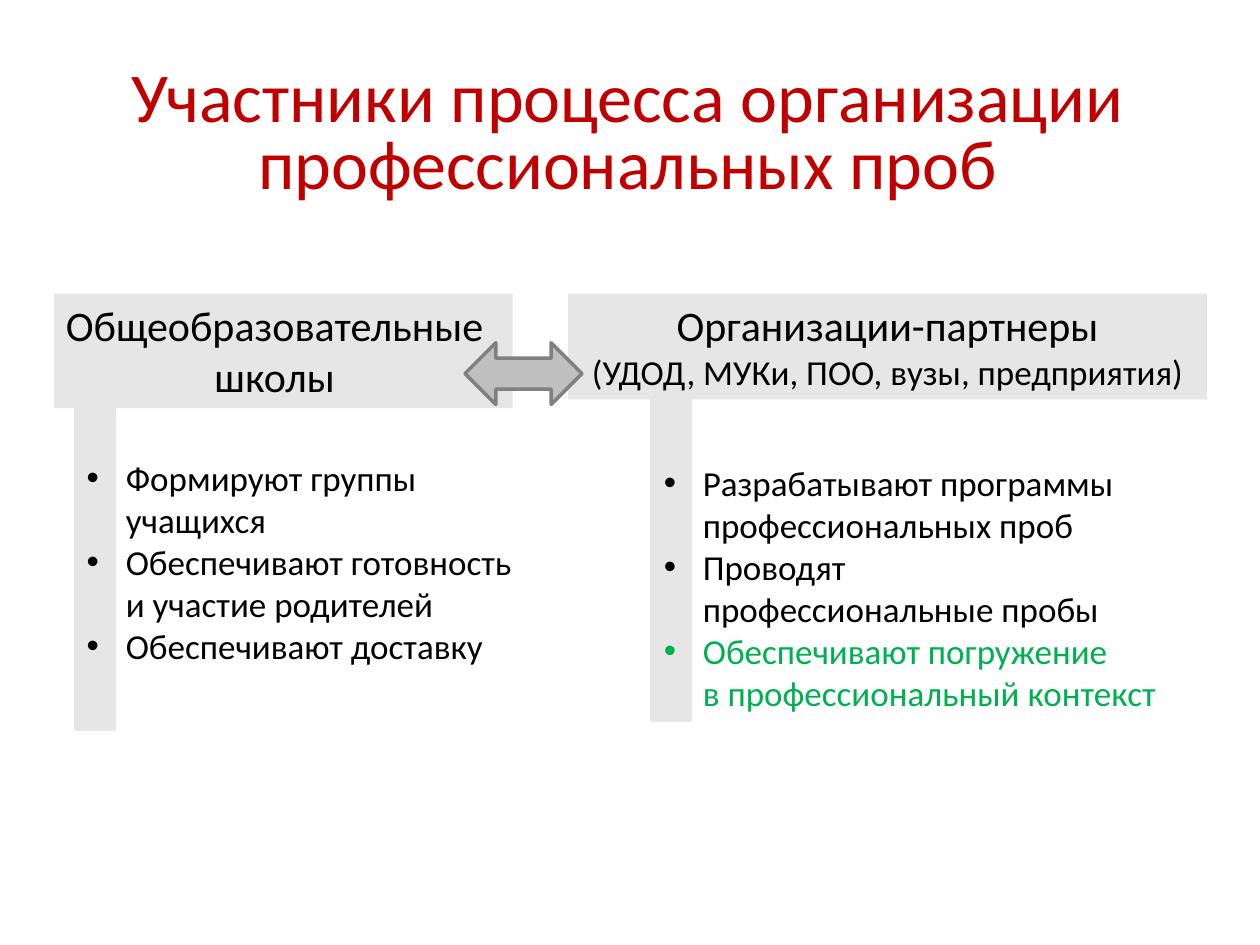
from dataclasses import dataclass

from lxml import etree
from pptx import Presentation
from pptx.dml.color import RGBColor
from pptx.enum.shapes import MSO_SHAPE
from pptx.enum.text import MSO_ANCHOR, MSO_AUTO_SIZE, PP_ALIGN
from pptx.oxml.ns import qn
from pptx.util import Inches, Pt

RECTANGLE = MSO_SHAPE.RECTANGLE
DOUBLE_ARROW = MSO_SHAPE.LEFT_RIGHT_ARROW
CENTER, LEFT = PP_ALIGN.CENTER, PP_ALIGN.LEFT
TOP, MIDDLE = MSO_ANCHOR.TOP, MSO_ANCHOR.MIDDLE
FIXED_SIZE = MSO_AUTO_SIZE.NONE
TITLE_ONLY = 5
WIDTH, HEIGHT = Inches(10), Inches(7.5)
COLUMNS, ROWS = 100, 75


@dataclass(frozen=True)
class Theme:
    font: str = "Calibri"
    title: str = "C00000"
    text: str = "000000"
    accent: str = "00B050"
    panel: str = "E6E6E6"
    arrow: str = "BFBFBF"
    arrow_line: str = "808080"
    title_size: int = 40
    heading_size: int = 24
    body_size: int = 20
    line_width: int = 2
    indent: float = 0.31


class SlideBuilder:
    def __init__(self, slide, theme):
        self.slide = slide
        self.theme = theme

    @staticmethod
    def box(left, top, width, height):
        """Turn grid columns and rows into slide lengths."""
        column, row = WIDTH / COLUMNS, HEIGHT / ROWS
        return (round(left * column), round(top * row),
                round(width * column), round(height * row))

    def frame(self, shape, **formats):
        settings = {"word_wrap": True, "auto_size": FIXED_SIZE,
                    "vertical_anchor": TOP, **formats}
        for name, value in settings.items():
            setattr(shape.text_frame, name, value)
        return shape.text_frame

    def fill_paragraph(self, paragraph, text, size, color, **formats):
        for name, value in formats.items():
            setattr(paragraph, name, value)
        for number, line in enumerate(text.split("\n")):
            if number:
                paragraph.add_line_break()
            run = paragraph.add_run()
            run.text = line
            font_formats = {"name": self.theme.font, "size": Pt(size)}
            for name, value in font_formats.items():
                setattr(run.font, name, value)
            run.font.color.rgb = RGBColor.from_string(color)

    def fill_frame(self, frame, lines, **formats):
        """Add one paragraph for each (text, size, color); return them."""
        for number, line in enumerate(lines):
            paragraph = frame.add_paragraph() if number else frame.paragraphs[0]
            self.fill_paragraph(paragraph, *line, **formats)
        return frame.paragraphs

    def title(self, text, area):
        title = self.slide.shapes.title
        title.left, title.top, title.width, title.height = self.box(*area)
        frame = self.frame(title, vertical_anchor=MIDDLE)
        self.fill_frame(frame, [(text, self.theme.title_size, self.theme.title)],
                        alignment=CENTER, line_spacing=0.8)

    def shape(self, kind, area, fill, line=None):
        shape = self.slide.shapes.add_shape(kind, *self.box(*area))
        shape.shadow.inherit = False
        shape.fill.solid()
        shape.fill.fore_color.rgb = RGBColor.from_string(fill)
        if line:
            shape.line.color.rgb = RGBColor.from_string(line)
            shape.line.width = Pt(self.theme.line_width)
        else:
            shape.line.fill.background()
        return shape

    def heading(self, lines, area, **margins):
        shape = self.shape(RECTANGLE, area, self.theme.panel)
        frame = self.frame(shape, **margins)
        self.fill_frame(frame,
                        [(text, size, self.theme.text) for text, size in lines],
                        alignment=CENTER)

    def bar(self, left, top):
        self.shape(RECTANGLE, (left, top, 3.1, 25.5),
                   self.theme.panel, self.theme.panel)

    def arrow(self, area):
        self.shape(DOUBLE_ARROW, area, self.theme.arrow, self.theme.arrow_line)

    def bullets(self, items, area):
        shape = self.slide.shapes.add_textbox(*self.box(*area))
        lines = [(text, self.theme.body_size, color) for text, color in items]
        indent = Inches(self.theme.indent)
        for paragraph in self.fill_frame(self.frame(shape), lines, alignment=LEFT):
            properties = paragraph._p.get_or_add_pPr()
            properties.set("marL", str(indent))
            properties.set("indent", str(-indent))
            etree.SubElement(properties, qn("a:buFont")).set("typeface", "Arial")
            etree.SubElement(properties, qn("a:buChar")).set("char", "•")


def main():
    presentation = Presentation()
    presentation.slide_width, presentation.slide_height = WIDTH, HEIGHT
    slide = presentation.slides.add_slide(presentation.slide_layouts[TITLE_ONLY])
    theme = Theme()
    builder = SlideBuilder(slide, theme)

    builder.title("Участники процесса организации профессиональных проб",
                  (4.8, 3.6, 90, 14.4))

    builder.heading([("Общеобразовательные", theme.heading_size),
                     ("школы", theme.heading_size)],
                    (4.3, 23.3, 36.4, 9.1),
                    margin_left=Inches(0.03), margin_right=Inches(0.17))
    builder.bar(6, 32.4)
    builder.bar(51.7, 31.7)
    builder.heading([("Организации-партнеры", theme.heading_size),
                     ("(УДОД, МУКи, ПОО, вузы, предприятия)", theme.body_size)],
                    (45.1, 23.3, 50.7, 8.4))

    builder.bullets([("Формируют группы\nучащихся", theme.text),
                     ("Обеспечивают готовность \nи участие родителей", theme.text),
                     ("Обеспечивают доставку", theme.text)],
                    (5.9, 35.7, 37.3, 17.8))
    builder.bullets([("Разрабатывают программы\nпрофессиональных проб", theme.text),
                     ("Проводят\nпрофессиональные пробы", theme.text),
                     ("Обеспечивают погружение \nв профессиональный контекст",
                      theme.accent)],
                    (51.7, 36.1, 42.4, 21.2))
    builder.arrow((36.9, 27.2, 9.3, 4.9))

    presentation.save("out.pptx")


if __name__ == "__main__":
    main()
